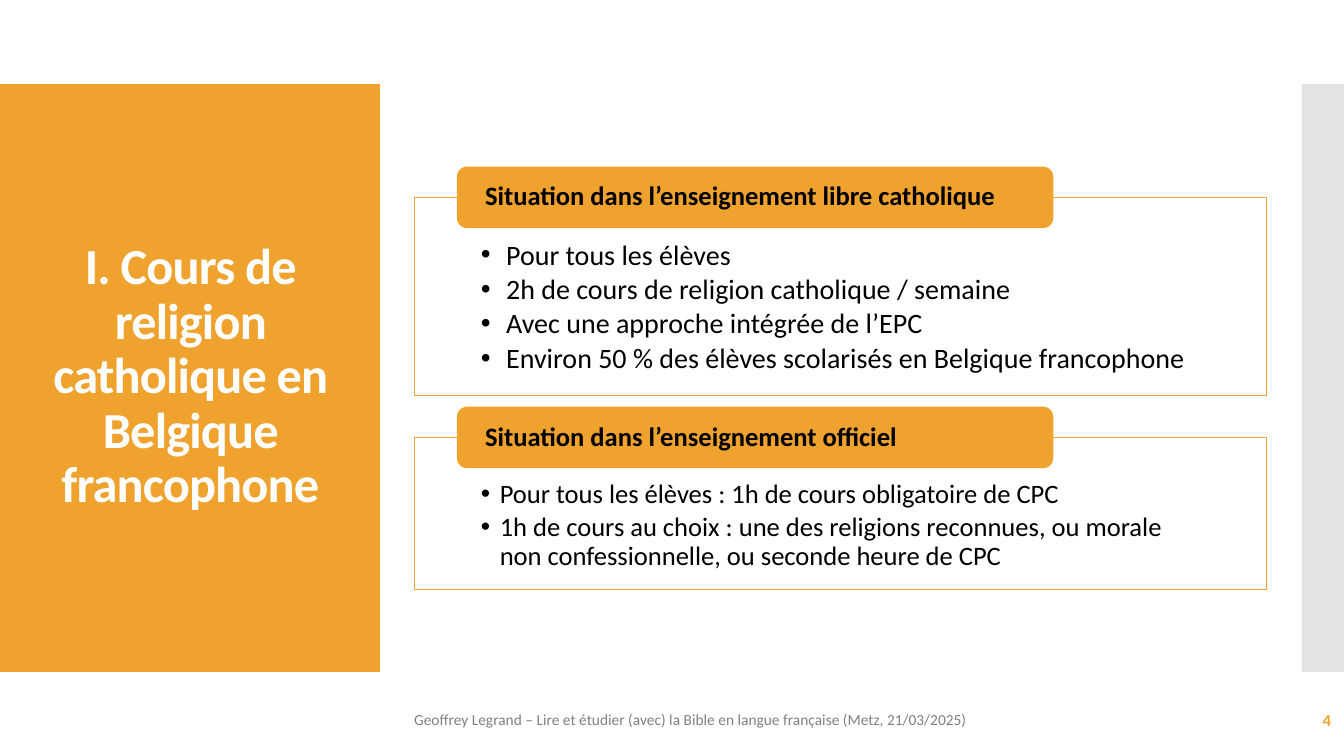
from lxml import etree
from pptx import Presentation
from pptx.dml.color import RGBColor
from pptx.enum import shapes, text
from pptx.oxml import ns
from pptx.util import Pt

ORANGE = RGBColor(0xF0, 0xA2, 0x2E)
LIGHT_GREY = RGBColor(0xC8, 0xC8, 0xC8)
GREY = RGBColor(0x80, 0x80, 0x80)
WHITE = RGBColor(0xFF, 0xFF, 0xFF)
BLACK = RGBColor(0, 0, 0)

SECTIONS = [
    # heading, box top, box height, text size, bullet indent, bullets
    ("Situation dans l’enseignement libre catholique", 141, 141.3, 20, 18, [
        "Pour tous les élèves",
        "2h de cours de religion catholique / semaine",
        "Avec une approche intégrée de l’EPC",
        "Environ 50 % des élèves scolarisés en Belgique francophone",
    ]),
    ("Situation dans l’enseignement officiel", 312.5, 108.7, 19, 13.5, [
        "Pour tous les élèves : 1h de cours obligatoire de CPC",
        "1h de cours au choix : une des religions reconnues, ou morale "
        "non confessionnelle, ou seconde heure de CPC",
    ]),
]


class SlideBuilder:
    font = "Calibri"
    line_spacing = 0.9
    insets = (7.2, 3.6, 7.2, 3.6)

    def __init__(self, slide):
        self.slide = slide

    def block(self, kind, box, fill, opacity=100, line=None):
        shape = self.slide.shapes.add_shape(kind, *map(Pt, box))
        shape.shadow.inherit = False
        shape.fill.solid()
        shape.fill.fore_color.rgb = fill
        if opacity < 100:
            color = shape.element.spPr.find(".//" + ns.qn("a:srgbClr"))
            etree.SubElement(color, ns.qn("a:alpha"), val=str(opacity * 1000))
        if line is None:
            shape.line.fill.background()
        else:
            shape.line.color.rgb = line
            shape.line.width = Pt(0.75)
        return shape

    def frame(self, shape, anchor, insets):
        frame = shape.text_frame
        frame.word_wrap = True
        frame.auto_size = text.MSO_AUTO_SIZE.NONE
        frame.vertical_anchor = anchor
        (frame.margin_left, frame.margin_top,
         frame.margin_right, frame.margin_bottom) = map(Pt, insets)
        return frame

    def run(self, paragraph, words, size, color, bold=False,
            align=text.PP_ALIGN.LEFT):
        paragraph.alignment = align
        paragraph.line_spacing = self.line_spacing
        run = paragraph.add_run()
        run.text = words
        run.font.name = self.font
        run.font.size = Pt(size)
        run.font.bold = bold
        run.font.color.rgb = color
        return run

    def title(self, words, box, size):
        title = self.slide.shapes.title
        title.left, title.top, title.width, title.height = map(Pt, box)
        frame = self.frame(title, text.MSO_ANCHOR.MIDDLE, self.insets)
        run = self.run(frame.paragraphs[0], words, size, WHITE, True,
                       text.PP_ALIGN.CENTER)
        run._r.get_or_add_rPr().set("spc", "-60")
        return title

    def label(self, words, box, size, color, bold=False,
              align=text.PP_ALIGN.LEFT):
        shape = self.slide.shapes.add_textbox(*map(Pt, box))
        frame = self.frame(shape, text.MSO_ANCHOR.MIDDLE, self.insets)
        self.run(frame.paragraphs[0], words, size, color, bold, align)

    def bullets(self, frame, items, size, indent):
        for index, item in enumerate(items):
            paragraph = frame.paragraphs[0] if index == 0 else frame.add_paragraph()
            self.run(paragraph, item, size, BLACK)
            paragraph.level = 1
            paragraph.space_after = Pt(0.15 * size)
            properties = paragraph._p.get_or_add_pPr()
            properties.set("marL", str(Pt(indent)))
            properties.set("indent", str(-Pt(indent)))
            etree.SubElement(properties, ns.qn("a:buFont"), typeface="Arial")
            etree.SubElement(properties, ns.qn("a:buChar"), char="•")

    def section(self, heading, top, height, size, indent, items):
        """Draw an outlined bullet box with a heading tab across its top edge."""
        box = self.block(shapes.MSO_SHAPE.RECTANGLE, (296, top, 608.5, height),
                         WHITE, 90, ORANGE)
        frame = self.frame(box, text.MSO_ANCHOR.TOP, (47.5, 31, 47.5, 11))
        self.bullets(frame, items, size, indent)
        tab = self.block(shapes.MSO_SHAPE.ROUNDED_RECTANGLE,
                         (326.4, top - 22, 426, 44), ORANGE)
        frame = self.frame(tab, text.MSO_ANCHOR.MIDDLE, (18, 0, 18, 0))
        self.run(frame.paragraphs[0], heading, 19, BLACK, True)


def main():
    presentation = Presentation()
    presentation.slide_width, presentation.slide_height = Pt(960), Pt(540)
    slide = presentation.slides.add_slide(presentation.slide_layouts[5])
    builder = SlideBuilder(slide)

    title = builder.title("I. Cours de religion catholique en Belgique francophone",
                          (20, 88.5, 232, 362), 36)
    panel = builder.block(shapes.MSO_SHAPE.RECTANGLE, (0, 60, 271.3, 420), ORANGE)
    title.element.addprevious(panel.element)
    builder.block(shapes.MSO_SHAPE.RECTANGLE, (930, 60, 30, 420), LIGHT_GREY, 50)

    for section in SECTIONS:
        builder.section(*section)

    builder.label("Geoffrey Legrand – Lire et étudier (avec) la Bible en langue "
                  "française (Metz, 21/03/2025)", (288.7, 500.5, 482, 28.8), 11, GREY)
    builder.label("4", (837.4, 500.5, 120.5, 28.8), 12, ORANGE, True,
                  text.PP_ALIGN.RIGHT)
    presentation.save("out.pptx")


if __name__ == "__main__":
    main()
